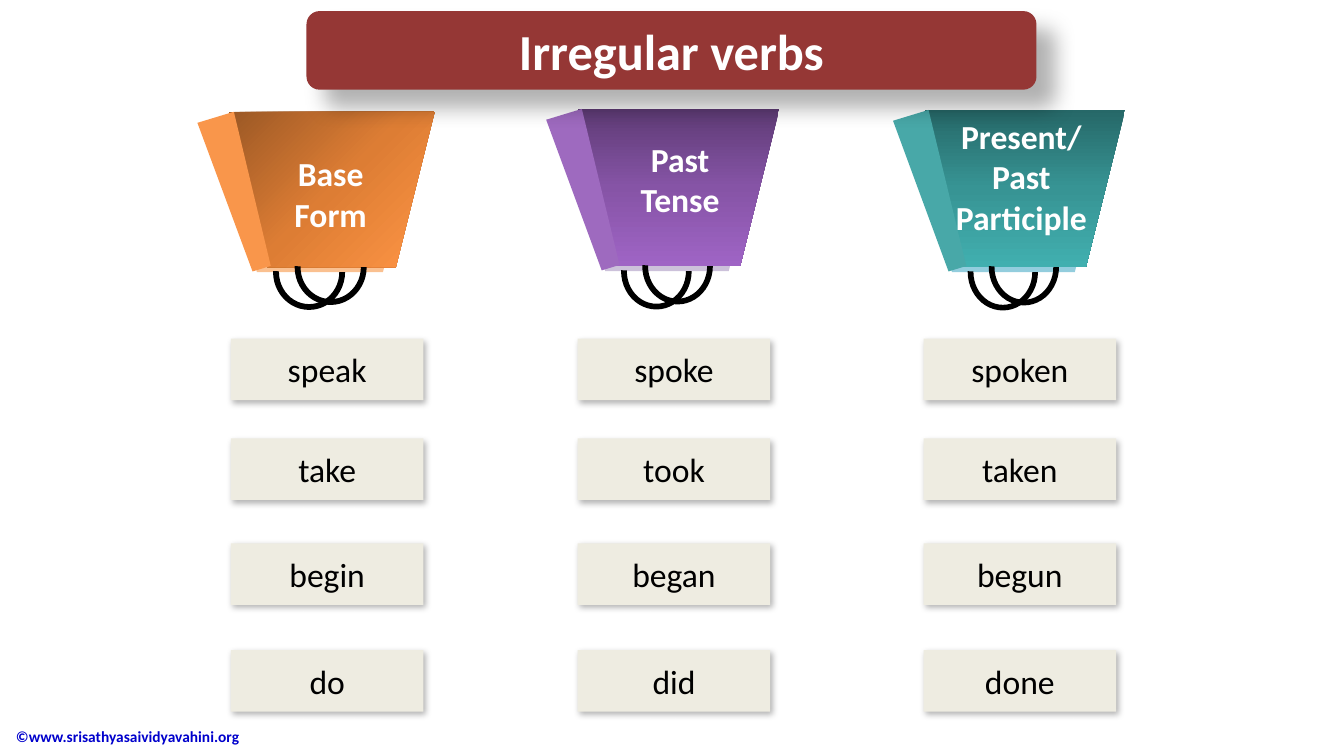
from dataclasses import dataclass

from lxml.etree import SubElement
from pptx import Presentation
from pptx.dml.color import RGBColor
from pptx.enum.shapes import MSO_SHAPE
from pptx.enum.text import MSO_ANCHOR, PP_ALIGN
from pptx.oxml.ns import qn
from pptx.shapes.autoshape import Shape
from pptx.shapes.shapetree import GroupShapes, SlideShapes
from pptx.util import Inches, Pt

COLOURS = {
    "white": "FFFFFF",
    "black": "000000",
    "banner": "953735",
    "card": "EEECE1",
    "credit": "0000CC",
}
BAG_BODY_WIDTH = 2.0
BAG_BODY_HEIGHT = 1.56
CARD_LEFTS = (2.29, 5.73, 9.16)
CARD_TOPS = (3.36, 4.35, 5.39, 6.45)
VERBS = (
    ("speak", "spoke", "spoken"),
    ("take", "took", "taken"),
    ("begin", "began", "begun"),
    ("do", "did", "done"),
)


@dataclass
class Area:
    left: float
    top: float
    width: float
    height: float


@dataclass
class Shadow:
    blur: float
    distance: float
    angle: int
    opacity: int = 30


@dataclass
class Bag:
    body: Area
    label: Area
    lines: tuple[str, ...]
    base: str
    side: str
    shades: tuple[str, str, str]
    angle: int


BAGS = (
    Bag(Area(2.27, 1.11, 2.04, 1.54), Area(2.61, 1.47, 1.34, 0.91), ("Base Form",),
        "FAC090", "F9964B", ("9B5825", "DD7D34", "FF9545"), 45),
    Bag(Area(5.73, 1.08, 2.0, 1.56), Area(6.16, 1.33, 1.17, 0.91), ("Past Tense",),
        "CCC1DA", "9E6ABF", ("5E3B75", "8654A6", "9F64C5"), 90),
    Bag(Area(9.17, 1.09, 1.99, 1.56), Area(9.28, 1.1, 1.7, 1.32),
        ("Present/", "Past Participle"),
        "93CDDD", "48A8A8", ("266868", "379494", "41AFAF"), 90),
)


def place(area: Area) -> tuple[Inches, Inches, Inches, Inches]:
    return (Inches(area.left), Inches(area.top),
            Inches(area.width), Inches(area.height))


def add_block(shapes: SlideShapes | GroupShapes, kind: MSO_SHAPE, area: Area,
              fill: str, rotation: float = 0) -> Shape:
    block = shapes.add_shape(kind, *place(area))
    block.shadow.inherit = False
    block.rotation = rotation
    block.fill.solid()
    block.fill.fore_color.rgb = RGBColor.from_string(fill)
    block.line.fill.background()
    return block


def write_text(box: Shape, *lines: str, size: int = 24, colour: str = "white",
               bold: bool = False, align: PP_ALIGN = PP_ALIGN.CENTER,
               anchor: MSO_ANCHOR = MSO_ANCHOR.MIDDLE) -> None:
    frame = box.text_frame
    frame.word_wrap = True
    frame.vertical_anchor = anchor
    frame.text = "\n".join(lines)
    for para in frame.paragraphs:
        para.alignment = align
        para.font.name = "Calibri"
        para.font.size = Pt(size)
        para.font.bold = bold
        para.font.color.rgb = RGBColor.from_string(COLOURS[colour])


def cast_shadow(block: Shape, shadow: Shadow) -> None:
    effects = block._element.spPr.find(qn("a:effectLst"))
    outer = SubElement(effects, qn("a:outerShdw"), {
        "blurRad": str(Pt(shadow.blur)),
        "dist": str(Pt(shadow.distance)),
        "dir": str(shadow.angle * 60000),
        "algn": "tl",
        "rotWithShape": "0",
    })
    colour = SubElement(outer, qn("a:srgbClr"), val=COLOURS["black"])
    SubElement(colour, qn("a:alpha"), val=str(shadow.opacity * 1000))


def shade(block: Shape, shades: tuple[str, str, str], angle: int) -> None:
    block.fill.gradient()
    gradient = block._element.spPr.find(qn("a:gradFill"))
    for child in list(gradient):
        gradient.remove(child)
    gradient.set("rotWithShape", "0")
    stops = SubElement(gradient, qn("a:gsLst"))
    for index, hue in enumerate(shades):
        stop = SubElement(stops, qn("a:gs"), pos=str(index * 50000))
        SubElement(stop, qn("a:srgbClr"), val=hue)
    SubElement(gradient, qn("a:lin"), ang=str(angle * 60000), scaled="0")


def draw_bag(shapes: SlideShapes, bag: Bag) -> None:
    parts = shapes.add_group_shape().shapes
    across = bag.body.width / BAG_BODY_WIDTH
    down = bag.body.height / BAG_BODY_HEIGHT

    def part(left: float, top: float, width: float, height: float) -> Area:
        return Area(bag.body.left + left * across, bag.body.top + top * down,
                    width * across, height * down)

    add_block(parts, MSO_SHAPE.TRAPEZOID, part(0.26, 1.56, 1.25, 0.05), bag.base, 180)
    body = add_block(parts, MSO_SHAPE.TRAPEZOID, bag.body, bag.shades[1], 180)
    shade(body, bag.shades, bag.angle)
    add_block(parts, MSO_SHAPE.TRAPEZOID, part(-0.09, 0.02, 0.37, 1.59), bag.side, 163.1)
    for left, top in ((0.64, 1.18), (0.43, 1.23)):
        handle = add_block(parts, MSO_SHAPE.BLOCK_ARC, part(left, top, 0.7, 0.76),
                           COLOURS["black"], 180)
        for index, value in enumerate((108, 0.925, 0.081)):
            handle.adjustments[index] = value
    label = parts.add_textbox(*place(bag.label))
    write_text(label, *bag.lines, bold=True, anchor=MSO_ANCHOR.TOP)


def draw_cards(shapes: SlideShapes) -> None:
    for top, forms in zip(CARD_TOPS, VERBS):
        for left, form in zip(CARD_LEFTS, forms):
            card = add_block(shapes, MSO_SHAPE.RECTANGLE,
                             Area(left, top, 1.91, 0.61), COLOURS["card"])
            cast_shadow(card, Shadow(4.5, 2.6, 53))
            write_text(card, form, colour="black")


def main() -> None:
    deck = Presentation()
    deck.slide_width = Inches(13.33)
    deck.slide_height = Inches(7.5)
    page = deck.slides.add_slide(deck.slide_layouts[6])

    credit = page.shapes.add_textbox(*place(Area(0.06, 7.1, 3.53, 0.41)))
    write_text(credit, "©www.srisathyasaividyavahini.org", size=11,
               colour="credit", bold=True, align=PP_ALIGN.LEFT)
    for bag in BAGS:
        draw_bag(page.shapes, bag)
    draw_cards(page.shapes)
    banner = add_block(page.shapes, MSO_SHAPE.ROUNDED_RECTANGLE,
                       Area(3.04, 0.11, 7.24, 0.78), COLOURS["banner"])
    cast_shadow(banner, Shadow(15, 18, 45))
    write_text(banner, "Irregular verbs", size=36, bold=True)

    deck.save("out.pptx")


if __name__ == "__main__":
    main()
